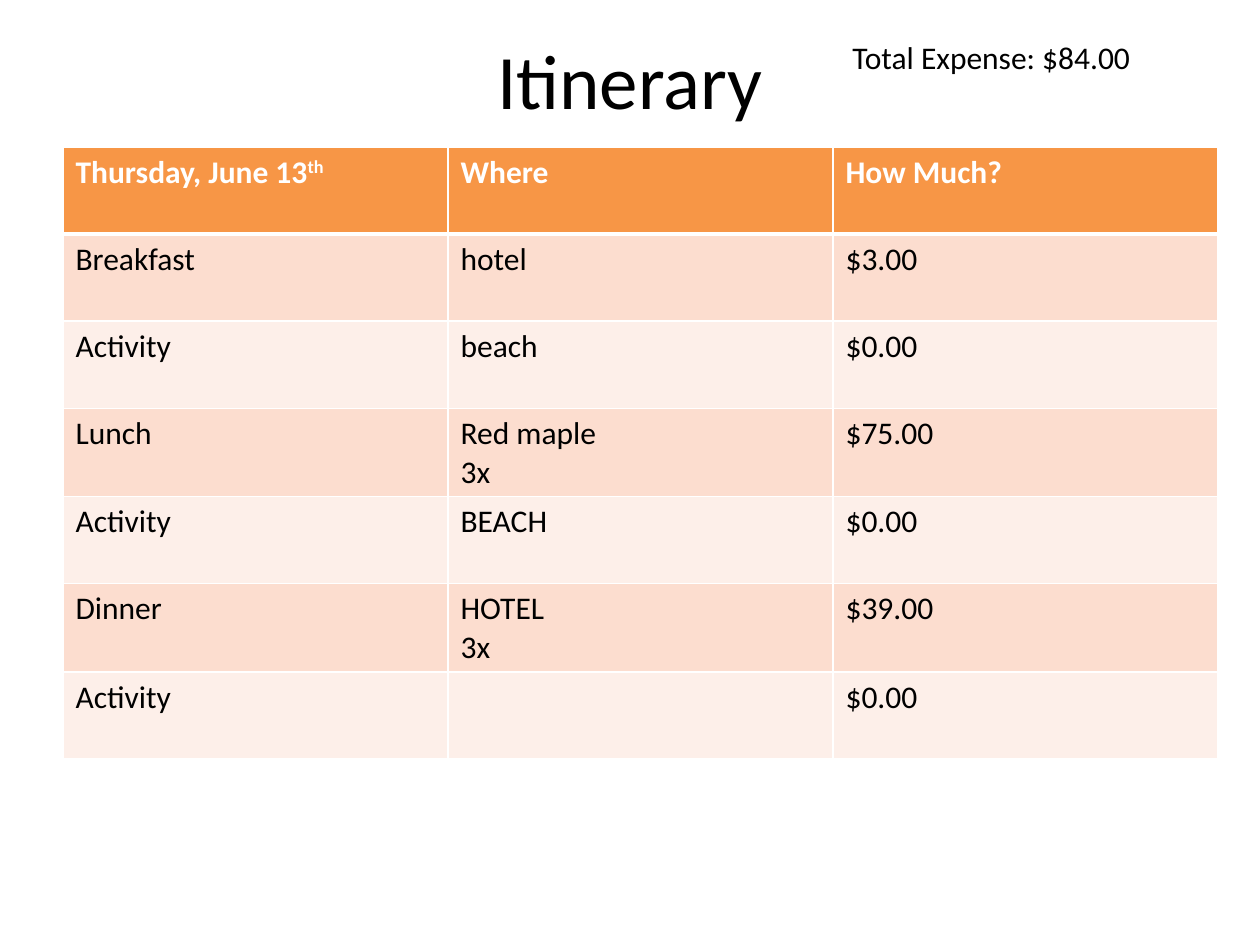
from lxml.etree import SubElement
from pptx import Presentation
from pptx.dml.color import RGBColor
from pptx.enum.text import MSO_ANCHOR as Anchor, PP_ALIGN as Align
from pptx.oxml.ns import qn
from pptx.util import Pt

BLACK = RGBColor(0x00, 0x00, 0x00)
WHITE = RGBColor(0xFF, 0xFF, 0xFF)
ORANGE = RGBColor(0xF7, 0x96, 0x46)
PEACH = RGBColor(0xFC, 0xDD, 0xCF)
CREAM = RGBColor(0xFD, 0xEF, 0xE9)

TITLE = {"name": "Calibri", "size": Pt(44), "bold": False}
BODY = {"name": "Calibri", "size": Pt(18), "bold": False}
HEADER = {**BODY, "bold": True}

PLAN = [
    ["Thursday, June 13", "Where", "How Much?"],
    ["Breakfast", "hotel", "$3.00"],
    ["Activity", "beach", "$0.00"],
    ["Lunch", "Red maple\n3x", "$75.00"],
    ["Activity", "BEACH", "$0.00"],
    ["Dinner", "HOTEL\n3x", "$39.00"],
    ["Activity", "", "$0.00"],
]


def add_span(para, text, style, color):
    """Append a formatted run to a paragraph and return it."""
    span = para.add_run()
    span.text = text
    for name, value in style.items():
        setattr(span.font, name, value)
    span.font.color.rgb = color
    return span


def add_label(page, box, text, style, align, anchor):
    """Place one line of text in the given box."""
    frame = page.shapes.add_textbox(*map(Pt, box)).text_frame
    frame.word_wrap = True
    frame.vertical_anchor = anchor
    frame.paragraphs[0].alignment = align
    add_span(frame.paragraphs[0], text, style, BLACK)


def set_borders(cell, widths):
    """Draw white cell borders; widths maps a side to points."""
    props = cell._tc.get_or_add_tcPr()
    for place, (side, width) in enumerate(widths.items()):
        line = props.makeelement(qn(f"a:ln{side}"), {"w": str(Pt(width))})
        fill = SubElement(line, qn("a:solidFill"))
        SubElement(fill, qn("a:srgbClr"), val=str(WHITE))
        props.insert(place, line)


def fill_cell(cell, text, style, color, fill):
    """Write the lines of a cell and colour it."""
    cell.fill.solid()
    cell.fill.fore_color.rgb = fill
    frame = cell.text_frame
    for number, line in enumerate(text.split("\n")):
        para = frame.add_paragraph() if number else frame.paragraphs[0]
        if line:
            add_span(para, line, style, color)


def add_plan(page, box, rows):
    """Place the day's plan as an evenly divided banded table."""
    left, top, width, height = box
    table = page.shapes.add_table(len(rows), len(rows[0]), *map(Pt, box)).table
    for column in table.columns:
        column.width = Pt(width / len(rows[0]))
    for r, texts in enumerate(rows):
        table.rows[r].height = Pt(height / len(rows))
        style, color = (BODY, BLACK) if r else (HEADER, WHITE)
        fill = (PEACH if r % 2 else CREAM) if r else ORANGE
        for c, text in enumerate(texts):
            cell = table.cell(r, c)
            fill_cell(cell, text, style, color, fill)
            set_borders(cell, {"L": 1, "R": 1, "T": 3 if r == 1 else 1, "B": 1 if r else 3})
    date = table.cell(0, 0).text_frame.paragraphs[0]
    ordinal = add_span(date, "th", HEADER, WHITE)
    ordinal.font._element.set("baseline", "30000")


def main():
    """Build the itinerary deck."""
    deck = Presentation()
    deck.slide_width, deck.slide_height = Pt(720), Pt(540)
    page = deck.slides.add_slide(deck.slide_layouts[6])
    add_label(page, (36, 0, 648, 90), "Itinerary", TITLE, Align.CENTER, Anchor.MIDDLE)
    add_label(page, (480, 18, 222, 29), "Total Expense: $84.00", BODY, Align.LEFT, Anchor.TOP)
    add_plan(page, (36, 84, 660, 348.6), PLAN)
    deck.save("out.pptx")


if __name__ == "__main__":
    main()
